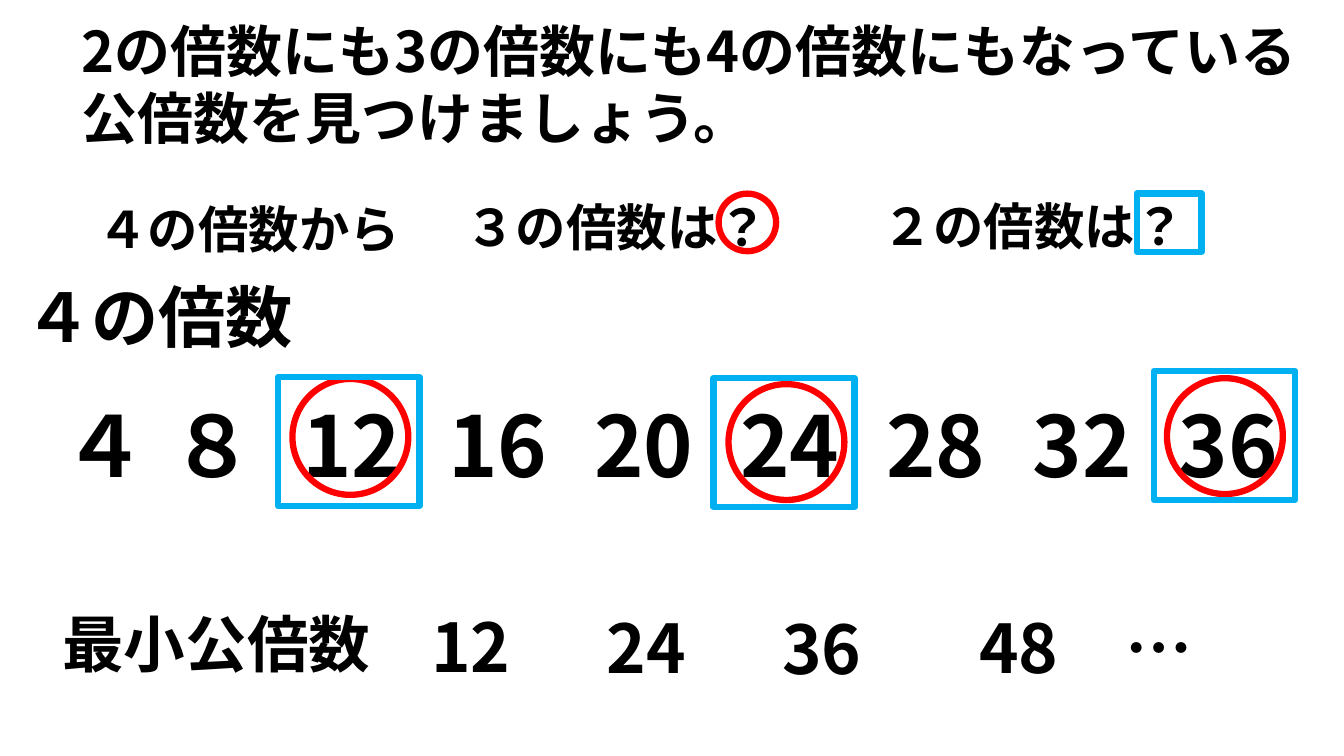
import dataclasses

import pptx
import pptx.dml.color
import pptx.enum.lang
import pptx.enum.shapes
import pptx.enum.text
import pptx.oxml
import pptx.oxml.ns
import pptx.util

Cm = pptx.util.Cm
Shape = pptx.enum.shapes.MSO_SHAPE
FONT = "Noto Sans CJK JP"
BLACK = "000000"
RED = "FF0000"
BLUE = "00B0F0"


@dataclasses.dataclass
class Label:
    text: str
    left: float
    top: float
    width: float
    height: float
    size: int


@dataclasses.dataclass
class Mark:
    kind: Shape
    color: str
    left: float
    top: float
    width: float
    height: float


def circle(left: float, top: float, size: float = 2.92) -> Mark:
    return Mark(Shape.OVAL, RED, left, top, size, size)


def square(left: float, top: float, width: float = 3.56, height: float = 3.25) -> Mark:
    return Mark(Shape.RECTANGLE, BLUE, left, top, width, height)


def paint(target, color: str) -> None:
    target.rgb = pptx.dml.color.RGBColor.from_string(color)


def write(box, label: Label) -> None:
    box.left, box.top = Cm(label.left), Cm(label.top)
    box.width, box.height = Cm(label.width), Cm(label.height)
    frame = box.text_frame
    frame.text = label.text
    frame.word_wrap = True
    frame.auto_size = pptx.enum.text.MSO_AUTO_SIZE.NONE
    frame.vertical_anchor = pptx.enum.text.MSO_ANCHOR.TOP
    para = frame.paragraphs[0]
    para.alignment = pptx.enum.text.PP_ALIGN.LEFT
    for span in para.runs:
        span.font.size = pptx.util.Pt(label.size)
        span.font.bold = True
        span.font.name = FONT
        span.font.language_id = pptx.enum.lang.MSO_LANGUAGE_ID.JAPANESE
        paint(span.font.color, BLACK)
        east_asian = pptx.oxml.parse_xml(
            f'<a:ea {pptx.oxml.ns.nsdecls("a")} typeface="{FONT}"/>'
        )
        span.font._element.append(east_asian)


def draw_label(page, label: Label) -> None:
    write(page.shapes.add_textbox(0, 0, 0, 0), label)


def draw_mark(page, mark: Mark) -> None:
    outline = page.shapes.add_shape(
        mark.kind, Cm(mark.left), Cm(mark.top), Cm(mark.width), Cm(mark.height)
    )
    outline.shadow.inherit = False
    outline.fill.background()
    outline.line.width = pptx.util.Pt(4.5)
    paint(outline.line.color, mark.color)


QUESTION = Label(
    "2の倍数にも3の倍数にも4の倍数にもなっている公倍数を見つけましょう。",
    1.8, 0.28, 31.29, 3.68, 40,
)
HINTS = [
    Label("４の倍数から", 2.21, 4.88, 8.23, 1.8, 36),
    Label("３の倍数は？", 11.48, 4.83, 8.23, 1.8, 36),
    Label("２の倍数は？", 22, 4.8, 9.65, 1.8, 36),
    Label("４の倍数", 0.36, 6.81, 10.21, 2.31, 48),
]
MULTIPLES = [
    Label("４", 1.32, 9.78, 2.06, 2.82, 60),
    Label("８", 4.04, 9.78, 2.51, 2.82, 60),
] + [
    Label(str(number), 7.37 + 3.68 * index, 9.78, 3.35, 2.82, 60)
    for index, number in enumerate(range(12, 37, 4))
]
ANSWERS = [
    Label("最小公倍数", 1.32, 15.14, 8.71, 2.13, 44),
    Label("12", 10.62, 15.14, 2.82, 2.31, 48),
    Label("24", 15.04, 15.16, 2.82, 2.31, 48),
    Label("36", 19.46, 15.19, 3.56, 2.31, 48),
    Label("48　…", 24.43, 15.16, 8.1, 2.31, 48),
]
MARKS = [
    circle(18.11, 4.88, 1.45),
    square(28.65, 4.88, 1.63, 1.47),
    circle(7.37, 9.55),
    square(7.01, 9.5),
    circle(18.36, 9.68),
    square(17.98, 9.53),
    circle(29.41, 9.53),
    square(29.08, 9.35),
]


def main() -> None:
    deck = pptx.Presentation()
    deck.slide_width, deck.slide_height = Cm(33.87), Cm(19.05)
    page = deck.slides.add_slide(deck.slide_layouts.get_by_name("Title Only"))
    write(page.shapes.title, QUESTION)
    for label in HINTS + MULTIPLES + ANSWERS:
        draw_label(page, label)
    for mark in MARKS:
        draw_mark(page, mark)
    deck.save("out.pptx")


if __name__ == "__main__":
    main()
